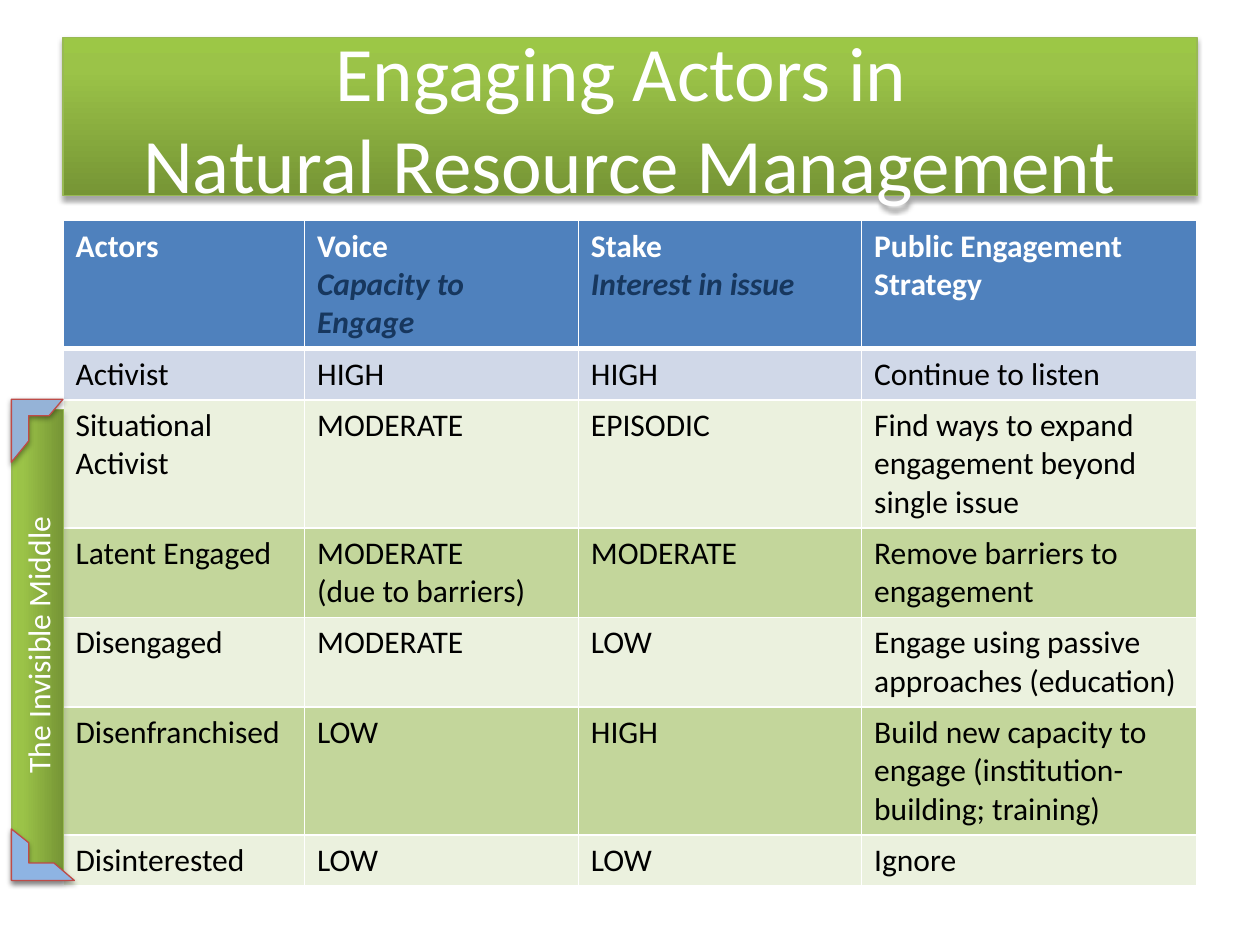
"""Build the slide on engaging actors in natural resource management."""
from dataclasses import dataclass

from lxml import etree
from pptx import Presentation
from pptx.dml.color import RGBColor
from pptx.enum import shapes, text
from pptx.oxml.ns import qn
from pptx.util import Cm, Pt

FONT = "Calibri"
COLORS = {
    "white": "FFFFFF", "black": "000000", "gray": "808080", "navy": "17375E",
    "header": "4F81BD", "blue": "D0D8E8", "pale": "EBF1DE", "green": "C3D69B",
    "banner_line": "98B954", "corner_line": "BE4B48",
    "corner_top": "95B3D7", "corner_bottom": "8EB4E3",
}
BANNER_STOPS = ((0, "9CC746"), (20, "9BC348"), (100, "769535"))
COLUMNS = (4.87, 5.52, 5.71, 6.76)


@dataclass
class Banner:
    left: float
    top: float
    width: float
    height: float
    size: int
    lines: tuple[str, ...]
    shadow: str = "black"
    rotation: int = 0


@dataclass
class Corner:
    fill: str
    points: tuple[tuple[float, float], ...]


@dataclass
class Row:
    height: float
    fill: str
    cells: tuple[str, ...]


BANNERS = (
    Banner(1.27, 0.76, 22.86, 3.18, 44,
           ("Engaging Actors in ", "Natural Resource Management")),
    Banner(-3.99, 12.49, 9.5, 1.03, 18, ("The Invisible Middle",), "gray", 270),
)
CORNERS = (
    Corner("corner_top", ((0.23, 8.05), (1.27, 8.05), (0.99, 8.38),
                          (0.58, 8.38), (0.58, 8.89), (0.23, 9.32))),
    Corner("corner_bottom", ((0.23, 17.75), (0.23, 16.71), (0.58, 16.99),
                             (0.58, 17.4), (1.09, 17.4), (1.5, 17.75))),
)
ROWS = (
    Row(2.55, "header", ("Actors", "Voice\nCapacity to Engage",
                         "Stake\nInterest in issue", "Public Engagement Strategy")),
    Row(1.03, "blue", ("Activist", "HIGH", "HIGH", "Continue to listen")),
    Row(2.55, "pale", ("Situational Activist", "MODERATE", "EPISODIC",
                       "Find ways to expand engagement beyond single issue")),
    Row(1.79, "green", ("Latent Engaged", "MODERATE\n(due to barriers)", "MODERATE",
                        "Remove barriers to engagement")),
    Row(1.79, "pale", ("Disengaged", "MODERATE", "LOW",
                       "Engage using passive approaches (education)")),
    Row(2.55, "green", ("Disenfranchised", "LOW", "HIGH",
                        "Build new capacity to engage (institution-building; training)")),
    Row(1.03, "pale", ("Disinterested", "LOW", "LOW", "Ignore")),
)


def rgb(name: str) -> RGBColor:
    return RGBColor.from_string(COLORS[name])


def add_color(parent, value: str):
    return etree.SubElement(parent, qn("a:srgbClr"), val=value)


def add_run(p, content: str, size: int, color: str, bold=False, italic=False) -> None:
    r = p.add_run()
    r.text = content
    r.font.name, r.font.size = FONT, Pt(size)
    r.font.bold, r.font.italic = bold, italic
    r.font.color.rgb = rgb(color)


def outline_and_shadow(sp, line: str, shadow: str, opacity: int, dist: float) -> None:
    sp.line.color.rgb = rgb(line)
    sp.line.width = Pt(0.75)
    sp.shadow.inherit = False
    effects = sp._element.spPr.find(qn("a:effectLst"))
    outer = etree.SubElement(effects, qn("a:outerShdw"), blurRad=str(Pt(3.1)),
                             dist=str(Pt(dist)), dir="5400000", rotWithShape="0")
    color = add_color(outer, COLORS[shadow])
    etree.SubElement(color, qn("a:alpha"), val=str(opacity * 1000))


def draw_banner(s, banner: Banner) -> None:
    sp = s.shapes.add_shape(shapes.MSO_SHAPE.RECTANGLE, Cm(banner.left), Cm(banner.top),
                            Cm(banner.width), Cm(banner.height))
    sp.rotation = banner.rotation
    sp.fill.gradient()
    sp.fill.gradient_angle = 270
    stops = sp._element.spPr.find(qn("a:gradFill")).find(qn("a:gsLst"))
    for stop in list(stops):
        stops.remove(stop)
    for position, value in BANNER_STOPS:
        add_color(etree.SubElement(stops, qn("a:gs"), pos=str(position * 1000)), value)
    outline_and_shadow(sp, "banner_line", banner.shadow, 35, 1.8)
    tf = sp.text_frame
    tf.word_wrap = True
    tf.vertical_anchor = text.MSO_ANCHOR.MIDDLE
    p = tf.paragraphs[0]
    p.alignment = text.PP_ALIGN.CENTER
    for i, line in enumerate(banner.lines):
        if i:
            p.add_line_break()
        add_run(p, line, banner.size, "white")


def draw_corner(s, corner: Corner) -> None:
    start, *rest = [(Cm(x), Cm(y)) for x, y in corner.points]
    builder = s.shapes.build_freeform(*start)
    builder.add_line_segments(rest, close=True)
    sp = builder.convert_to_shape()
    sp.fill.solid()
    sp.fill.fore_color.rgb = rgb(corner.fill)
    outline_and_shadow(sp, "corner_line", "black", 38, 1.6)


def set_borders(cell, bottom: int) -> None:
    tc_pr = cell._tc.get_or_add_tcPr()
    widths = {"lnL": 1, "lnR": 1, "lnT": 1, "lnB": bottom}
    for i, (side, width) in enumerate(widths.items()):
        ln = etree.Element(qn(f"a:{side}"), w=str(Pt(width)))
        add_color(etree.SubElement(ln, qn("a:solidFill")), COLORS["white"])
        tc_pr.insert(i, ln)


def fill_cell(cell, content: str, fill: str, is_header: bool, bottom: int) -> None:
    cell.fill.solid()
    cell.fill.fore_color.rgb = rgb(fill)
    set_borders(cell, bottom)
    tf = cell.text_frame
    for i, line in enumerate(content.split("\n")):
        p = tf.add_paragraph() if i else tf.paragraphs[0]
        subtitle = is_header and i > 0
        color = "navy" if subtitle else "white" if is_header else "black"
        add_run(p, line, 18, color, is_header, subtitle)


def draw_table(s, rows: tuple[Row, ...]) -> None:
    table = s.shapes.add_table(len(rows), len(COLUMNS), Cm(1.27), Cm(4.45),
                               Cm(sum(COLUMNS)), Cm(sum(r.height for r in rows))).table
    for column, width in zip(table.columns, COLUMNS):
        column.width = Cm(width)
    for i, row in enumerate(rows):
        table.rows[i].height = Cm(row.height)
        for j, content in enumerate(row.cells):
            fill_cell(table.cell(i, j), content, row.fill, i == 0, 1 if i else 3)


def main() -> None:
    prs = Presentation()
    prs.slide_width, prs.slide_height = Cm(25.4), Cm(19.05)
    s = prs.slides.add_slide(prs.slide_layouts[6])
    title, side_label = BANNERS
    draw_banner(s, title)
    draw_table(s, ROWS)
    draw_banner(s, side_label)
    for corner in CORNERS:
        draw_corner(s, corner)
    prs.save("out.pptx")


if __name__ == "__main__":
    main()
